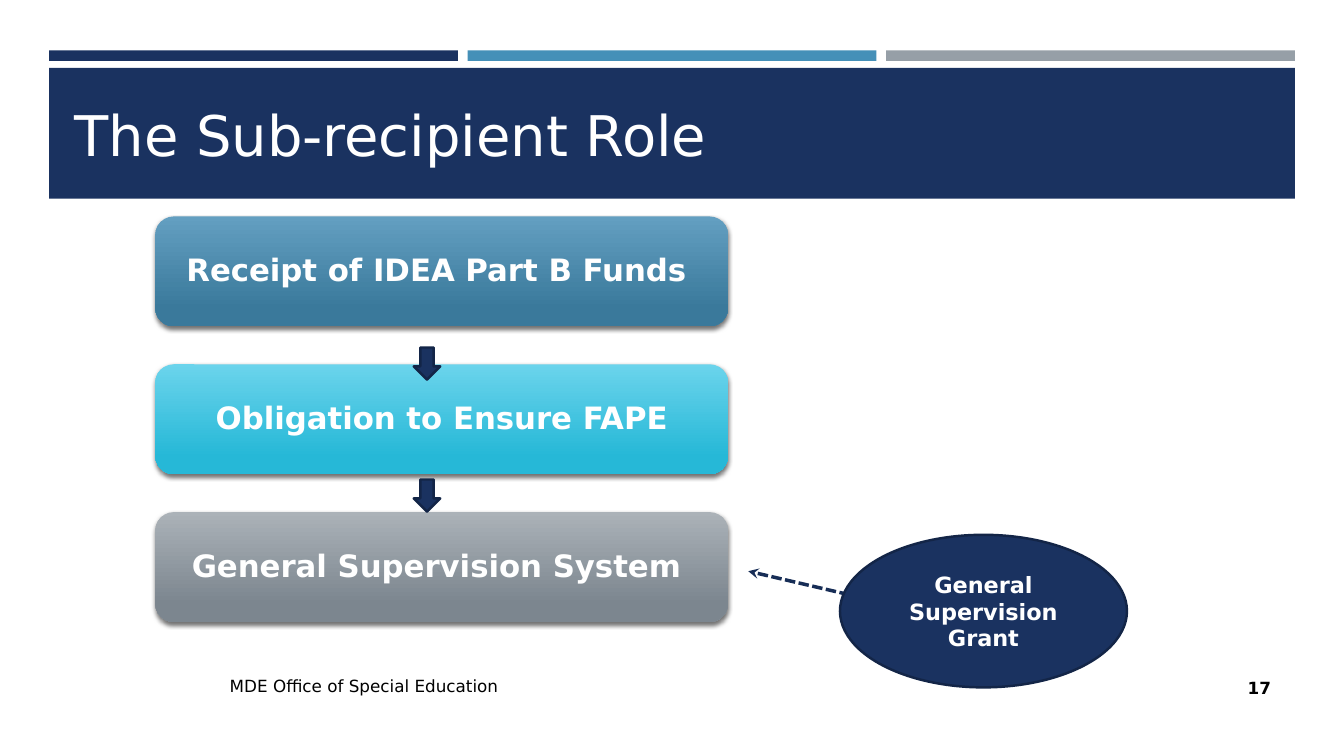
from lxml.etree import SubElement
from pptx import Presentation
from pptx.dml.color import RGBColor
from pptx.enum.dml import MSO_LINE
from pptx.enum.shapes import MSO_CONNECTOR, MSO_SHAPE
from pptx.enum.text import MSO_ANCHOR, PP_ALIGN
from pptx.oxml.ns import qn
from pptx.util import Pt

FONT = "DejaVu Sans"
NAVY, NAVY_EDGE, WHITE, BLACK = "1A3260", "132547", "FFFFFF", "000000"

TITLE = "The Sub-recipient Role"
STEPS = [  # text, top colour, bottom colour
    ("Receipt of IDEA Part B Funds ", "639FC1", "3A799B"),
    ("Obligation to Ensure FAPE", "6BD4EC", "26B8D7"),
    ("General Supervision System ", "ABB2B8", "7C868F"),
]
GRANT = ["General Supervision", "Grant"]
FOOTER = "MDE Office of Special Education"
PAGE_NUMBER = "17"
BAND_COLOURS = [NAVY, "4590B8", "969FA7"]

BAND_LEFT, BAND_TOP, BAND_WIDTH, BAND_HEIGHT, BAND_STEP = 35, 36, 292, 7.5, 299
BANNER = (35, 48.5, 890, 93.5)
TITLE_BOX = (46, 55.5, 868, 80)
STEP_LEFT, STEP_TOP, STEP_WIDTH, STEP_HEIGHT, STEP_PITCH = 111, 154.6, 409, 78.5, 105.6
ARROW_LEFT, ARROW_TOPS, ARROW_SIZE = 295.5, (248.2, 342.5), (19, 23)
GRANT_OVAL = (600, 382, 205, 109)
GRANT_LINK = (534.5, 408, 607.5, 425)
FOOTER_BOX = (157, 475.5, 433, 29)
NUMBER_BOX = (832, 476.5, 83, 29)


def colour(value):
    return RGBColor.from_string(value)


def write(shape, lines, align=PP_ALIGN.LEFT, ink=WHITE, **font_values):
    frame = shape.text_frame
    frame.word_wrap = True
    frame.vertical_anchor = MSO_ANCHOR.MIDDLE
    frame.text = "\n".join(lines)
    for paragraph in frame.paragraphs:
        paragraph.alignment = align
        for name, value in {"name": FONT, **font_values}.items():
            setattr(paragraph.font, name, value)
        paragraph.font.color.rgb = colour(ink)


def add_shape(kind, box, fill=NAVY, edge=None):
    shape = slide.shapes.add_shape(kind, *map(Pt, box))
    shape.shadow.inherit = False
    shape.fill.solid()
    shape.fill.fore_color.rgb = colour(fill)
    if edge:
        shape.line.color.rgb = colour(edge)
        shape.line.width = Pt(1.75)
    else:
        shape.line.fill.background()
    return shape


def add_step(text, box, top_colour, bottom_colour):
    shape = add_shape(MSO_SHAPE.ROUNDED_RECTANGLE, box)
    shape.fill.gradient()
    shape.fill.gradient_angle = 270
    stops = zip(shape.fill.gradient_stops, (0, 0.84), (top_colour, bottom_colour))
    for stop, position, value in stops:
        stop.position = position
        stop.color.rgb = colour(value)

    effects = shape._element.spPr.find(qn("a:effectLst"))
    shadow = SubElement(effects, qn("a:outerShdw"), blurRad=str(Pt(3)),
                        dist=str(Pt(2)), dir="5400000", rotWithShape="0")
    tint = SubElement(shadow, qn("a:srgbClr"), val=BLACK)
    SubElement(tint, qn("a:alpha"), val="55000")

    write(shape, [text], PP_ALIGN.CENTER, size=Pt(22), bold=True)
    shape.text_frame.paragraphs[0].line_spacing = 0.9


def add_grant_link():
    link = slide.shapes.add_connector(MSO_CONNECTOR.STRAIGHT, *map(Pt, GRANT_LINK))
    link.line.color.rgb = colour("172D56")
    link.line.width = Pt(2.5)
    link.line.dash_style = MSO_LINE.SQUARE_DOT
    SubElement(link.line._get_or_add_ln(), qn("a:headEnd"), type="stealth")
    SubElement(link._element.spPr, qn("a:effectLst"))


presentation = Presentation()
presentation.slide_width, presentation.slide_height = Pt(960), Pt(540)
slide = presentation.slides.add_slide(presentation.slide_layouts[5])

for index, band_colour in enumerate(BAND_COLOURS):
    left = BAND_LEFT + index * BAND_STEP
    add_shape(MSO_SHAPE.RECTANGLE, (left, BAND_TOP, BAND_WIDTH, BAND_HEIGHT), band_colour)
add_shape(MSO_SHAPE.RECTANGLE, BANNER)

title = slide.shapes.title
title.left, title.top, title.width, title.height = map(Pt, TITLE_BOX)
write(title, [TITLE], size=Pt(40))
slide.shapes._spTree.append(title._element)  # in front of the banner

footer = slide.shapes.add_textbox(*map(Pt, FOOTER_BOX))
write(footer, [FOOTER], ink=BLACK, size=Pt(12))
number = slide.shapes.add_textbox(*map(Pt, NUMBER_BOX))
write(number, [PAGE_NUMBER], PP_ALIGN.RIGHT, BLACK, size=Pt(12), bold=True)

for index, (text, top_colour, bottom_colour) in enumerate(STEPS):
    top = STEP_TOP + index * STEP_PITCH
    add_step(text, (STEP_LEFT, top, STEP_WIDTH, STEP_HEIGHT), top_colour, bottom_colour)

add_grant_link()
oval = add_shape(MSO_SHAPE.OVAL, GRANT_OVAL, edge=NAVY_EDGE)
write(oval, GRANT, PP_ALIGN.CENTER, size=Pt(16), bold=True)

for top in ARROW_TOPS:
    add_shape(MSO_SHAPE.DOWN_ARROW, (ARROW_LEFT, top, *ARROW_SIZE), edge=NAVY_EDGE)

presentation.save("out.pptx")
